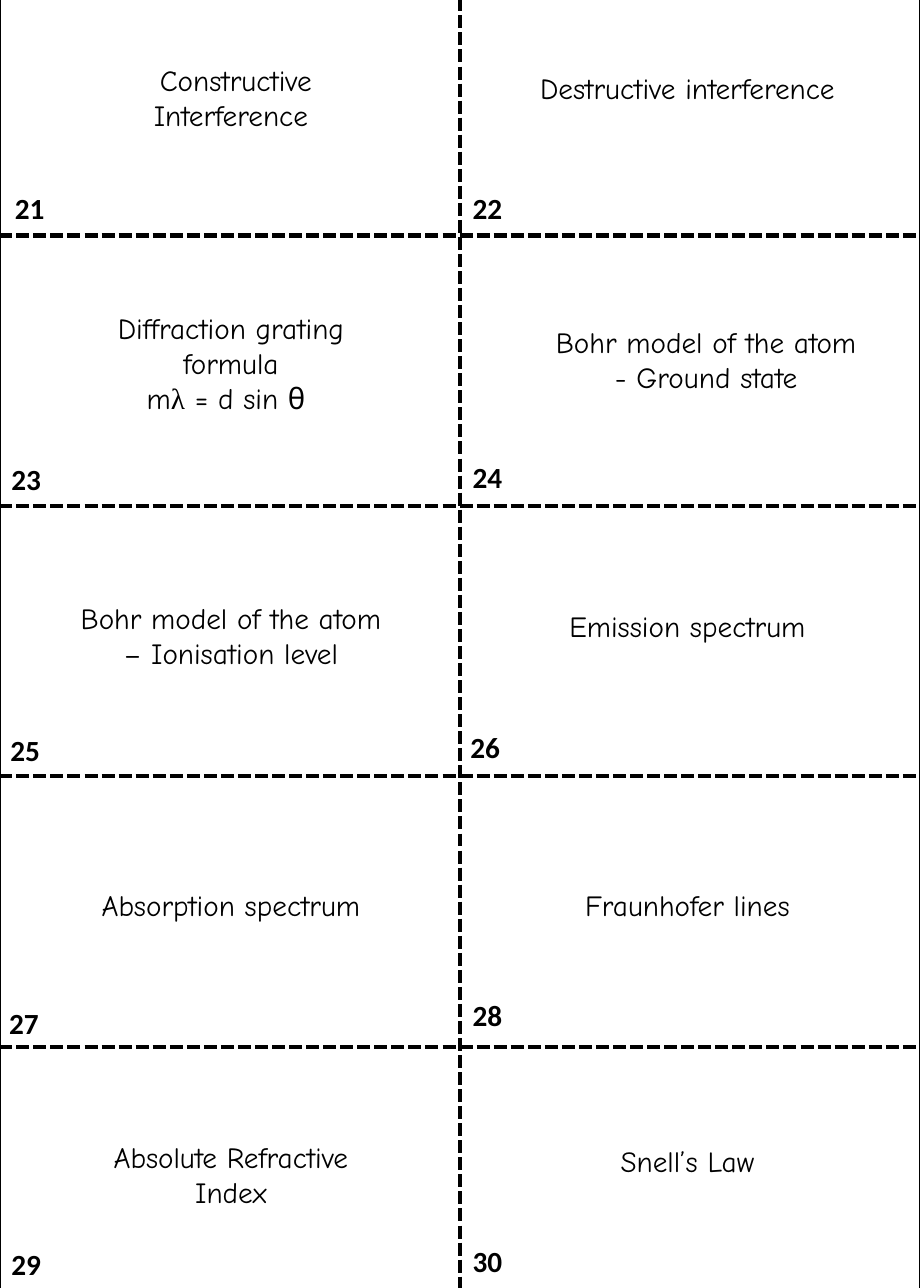
from lxml import etree
from pptx import Presentation
from pptx import util as u
from pptx.dml.color import RGBColor
from pptx.enum import text
from pptx.oxml.ns import qn

COLORS = {"ink": "000000"}
WIDTH, HEIGHT = 7.87, 11.02
COLS, ROWS = 2, 5
GRID_TOP, GRID_HEIGHT = -0.3, 11.57
COL_W, ROW_H = WIDTH / COLS, GRID_HEIGHT / ROWS
FIRST_NUMBER = 21
PHRASE_W = 2.85

# Phrase paragraphs, phrase offset and number offset inside the cell (inches)
CARDS = [
    ([" Constructive Interference"], (0.55, 0.78), (0.03, 1.88)),
    (["Destructive interference"], (0.52, 0.85), (0.01, 1.88)),
    (["Diffraction grating formula", "mλ = d sin θ "], (0.55, 0.59), (0, 1.88)),
    (["Bohr model of the atom - Ground state"], (0.68, 0.71), (0.01, 1.87)),
    (["Bohr model of the atom – Ionisation level"], (0.55, 0.76), (-0.01, 1.89)),
    (["Emission spectrum"], (0.52, 0.83), (-0.01, 1.86)),
    (["Absorption spectrum"], (0.55, 0.9), (-0.02, 1.91)),
    (["Fraunhofer lines"], (0.52, 0.9), (0.01, 1.84)),
    (["Absolute Refractive Index"], (0.55, 0.74), (0, 1.66)),
    (["Snell’s Law"], (0.52, 0.78), (0.01, 1.63)),
]


def set_border(cell, side, width, dash):
    ln = etree.SubElement(cell._tc.get_or_add_tcPr(), qn(f"a:ln{side}"),
                          w=str(u.Pt(width)))
    fill = etree.SubElement(ln, qn("a:solidFill"))
    etree.SubElement(fill, qn("a:srgbClr"), val=COLORS["ink"])
    etree.SubElement(ln, qn("a:prstDash"), val=dash)


def add_card_grid(slide):
    frame = slide.shapes.add_table(ROWS, COLS, 0, u.Inches(GRID_TOP),
                                   u.Inches(WIDTH), u.Inches(GRID_HEIGHT))
    table = frame.table
    table.first_row = table.horz_banding = False
    for row in range(ROWS):
        for col in range(COLS):
            cell = table.cell(row, col)
            # Thin solid line outside, thick dashed cut line inside
            outer = {"L": col == 0, "R": col == COLS - 1,
                     "T": row == 0, "B": row == ROWS - 1}
            for side, is_outer in outer.items():
                set_border(cell, side, *((1, "solid") if is_outer else (3, "dash")))
            cell.fill.background()


def add_text(slide, index, offset, width, lines, font, align, bold=False):
    row, col = divmod(index, COLS)
    left = col * COL_W + offset[0]
    top = GRID_TOP + row * ROW_H + offset[1]
    sp = slide.shapes.add_textbox(u.Inches(left), u.Inches(top),
                                  u.Inches(width), u.Inches(0.4))
    tf = sp.text_frame
    tf.word_wrap = True
    tf.auto_size = text.MSO_AUTO_SIZE.SHAPE_TO_FIT_TEXT
    for i, line in enumerate(lines):
        p = tf.add_paragraph() if i else tf.paragraphs[0]
        p.alignment = align
        p.font.size = u.Pt(18)
        p.font.bold = bold
        p.font.color.rgb = RGBColor.from_string(COLORS["ink"])
        # The wavelength symbol is set in a serif face
        before, symbol, after = line.partition("λ")
        for part in filter(None, (before, symbol, after)):
            r = p.add_run()
            r.text = part
            r.font.name = "Times New Roman" if part == "λ" else font
            r.font.size = u.Pt(18)
            r.font.bold = bold
            r.font.color.rgb = RGBColor.from_string(COLORS["ink"])


def main():
    prs = Presentation()
    prs.slide_width, prs.slide_height = u.Inches(WIDTH), u.Inches(HEIGHT)
    slide = prs.slides.add_slide(prs.slide_layouts[6])

    # Cut lines
    add_card_grid(slide)

    # Phrase and number on each card
    for i, (lines, phrase_at, number_at) in enumerate(CARDS):
        add_text(slide, i, phrase_at, PHRASE_W, lines, "Comic Neue",
                 text.PP_ALIGN.CENTER)
        add_text(slide, i, number_at, 0.53, [str(FIRST_NUMBER + i)], "Calibri",
                 text.PP_ALIGN.LEFT, bold=True)

    prs.save("out.pptx")


if __name__ == "__main__":
    main()
